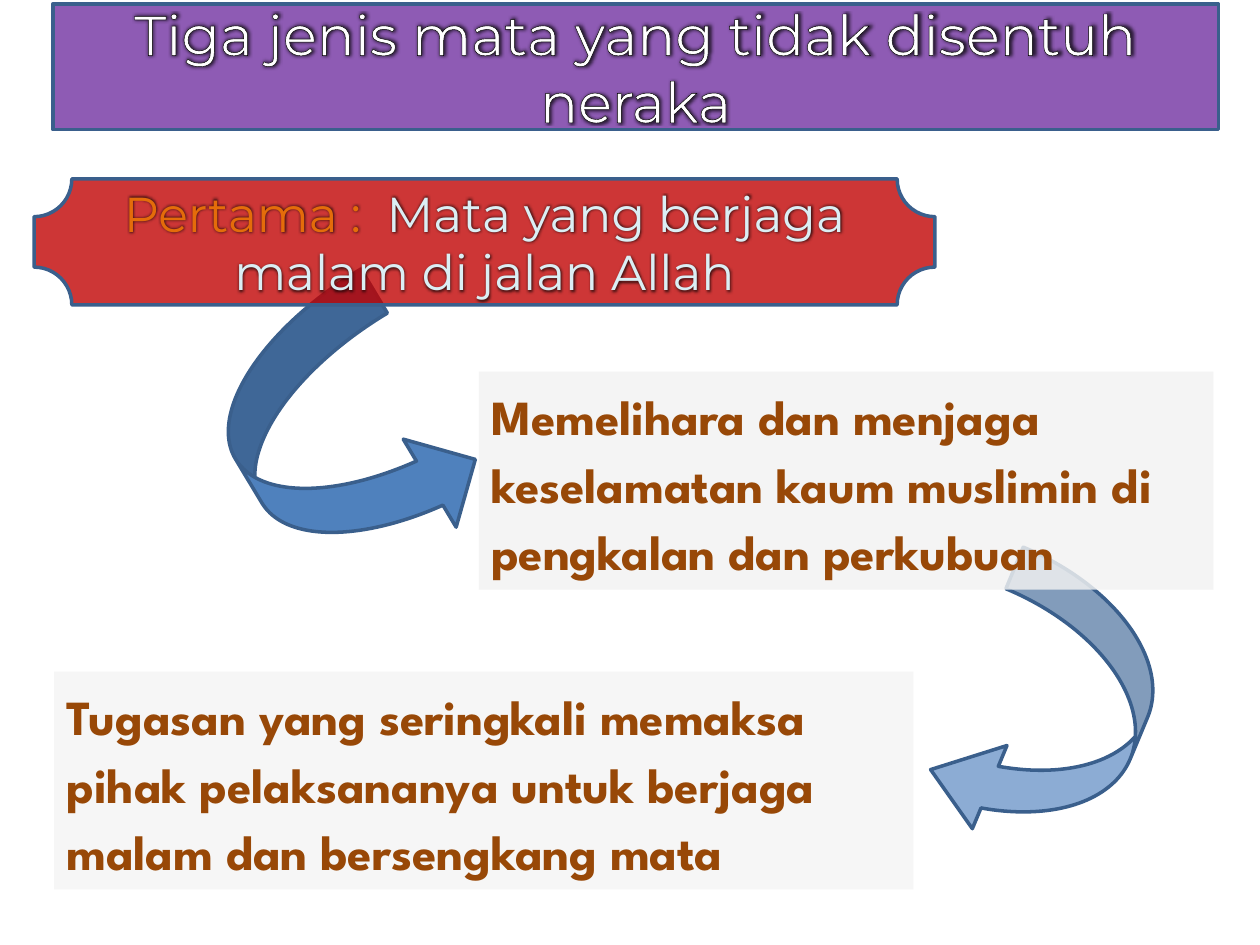
from lxml import etree
from pptx import Presentation
from pptx.dml.color import RGBColor
from pptx.enum.shapes import MSO_SHAPE
from pptx.enum.text import MSO_ANCHOR, MSO_AUTO_SIZE, PP_ALIGN
from pptx.oxml import parse_xml
from pptx.oxml.ns import nsdecls, qn
from pptx.util import Inches, Pt

PLAQUE = MSO_SHAPE.PLAQUE
RECTANGLE = MSO_SHAPE.RECTANGLE
LEFT_ARROW = MSO_SHAPE.CURVED_LEFT_ARROW
RIGHT_ARROW = MSO_SHAPE.CURVED_RIGHT_ARROW
MIDDLE, TOP = MSO_ANCHOR.MIDDLE, MSO_ANCHOR.TOP
CENTER, LEFT = PP_ALIGN.CENTER, PP_ALIGN.LEFT
NO_AUTOFIT = MSO_AUTO_SIZE.NONE

THEME = {
    "title_fill": "7030A0", "heading_fill": "C00000", "panel": "F2F2F2",
    "arrow": "4F81BD", "line": "3A5F8C", "white": "FFFFFF",
    "orange": "E46C0A", "pale": "DBEEF4", "brown": "984807", "outline": "000000",
    "heading_font": "Montserrat", "body_font": "League Spartan",
    "title_size": Pt(32), "text_size": Pt(28),
    "line_width": Pt(2), "outline_width": Pt(0.75), "glow": Pt(3),
}


def paint(shape, color, opacity, outlined):
    shape.fill.solid()
    shape.fill.fore_color.rgb = RGBColor.from_string(THEME[color])
    if opacity < 100:
        color_element = shape.fill._xPr.find(qn("a:solidFill"))[0]
        etree.SubElement(color_element, qn("a:alpha"), val=str(opacity * 1000))
    if outlined:
        shape.line.color.rgb = RGBColor.from_string(THEME["line"])
        shape.line.width = THEME["line_width"]
    else:
        shape.line.fill.background()


def write(shape, runs, font, size, anchor, alignment):
    frame = shape.text_frame
    frame.word_wrap = True
    frame.auto_size = NO_AUTOFIT
    frame.vertical_anchor = anchor
    paragraph = frame.paragraphs[0]
    paragraph.alignment = alignment
    for text, color in runs:
        run = paragraph.add_run()
        run.text = text
        run.font.name = THEME[font]
        run.font.size = THEME[size]
        run.font.bold = font == "body_font"
        run.font.color.rgb = RGBColor.from_string(THEME[color])
        if font == "heading_font":
            properties = run.font._element
            black = f'<a:srgbClr val="{THEME["outline"]}"'
            properties.insert(0, parse_xml(
                f'<a:ln {nsdecls("a")} w="{THEME["outline_width"]}">'
                f'<a:solidFill>{black}/></a:solidFill></a:ln>'))
            properties.insert(2, parse_xml(
                f'<a:effectLst {nsdecls("a")}><a:glow rad="{THEME["glow"]}">'
                f'{black}><a:alpha val="70000"/></a:srgbClr></a:glow></a:effectLst>'))
    return paragraph


presentation = Presentation()
presentation.slide_width = Inches(10)
presentation.slide_height = Inches(7.5)
slide = presentation.slides.add_slide(presentation.slide_layouts[5])

title = slide.shapes.title
title.left, title.top = Inches(0.42), Inches(0.03)
title.width, title.height = Inches(9.25), Inches(1)
title._element.spPr.append(parse_xml(
    f'<a:prstGeom {nsdecls("a")} prst="plaque"><a:avLst>'
    '<a:gd name="adj" fmla="val 50000"/></a:avLst></a:prstGeom>'))
paint(title, "title_fill", 79, True)
write(title, [("Tiga jenis mata yang tidak disentuh neraka", "white")],
      "heading_font", "title_size", MIDDLE, CENTER)

duty = "Tugasan yang seringkali memaksa pihak pelaksananya untuk berjaga malam dan bersengkang mata"
guarding = "Memelihara dan menjaga keselamatan kaum muslimin di pengkalan dan perkubuan"
heading = [("Pertama :  ", "orange"), ("Mata yang berjaga malam di jalan Allah", "pale")]

parts = [
    (RECTANGLE, (0.43, 5.33, 6.82, 1.73), 0, [], "panel", 69, [(duty, "brown")]),
    (LEFT_ARROW, (7.63, 4.53, 1.43, 2.27), 22.6, [0.25, 0.5, 0.34], "arrow", 65, []),
    (RECTANGLE, (3.8, 2.95, 5.83, 1.73), 0, [], "panel", 83, [(guarding, "brown")]),
    (RIGHT_ARROW, (1.91, 2.4, 1.63, 2.17), 329, [], "arrow", 100, []),
    (PLAQUE, (0.27, 1.42, 7.15, 1), 0, [0.3], "heading_fill", 79, heading),
]

for kind, box, rotation, adjustments, color, opacity, runs in parts:
    shape = slide.shapes.add_shape(kind, *[Inches(value) for value in box])
    shape.rotation = rotation
    shape.shadow.inherit = False
    for index, value in enumerate(adjustments):
        shape.adjustments[index] = value
    paint(shape, color, opacity, kind != RECTANGLE)
    if kind == RECTANGLE:
        paragraph = write(shape, runs, "body_font", "text_size", TOP, LEFT)
        paragraph.line_spacing = 1.15
        paragraph.space_after = Pt(8)
    elif runs:
        write(shape, runs, "heading_font", "text_size", MIDDLE, CENTER)

presentation.save("out.pptx")
